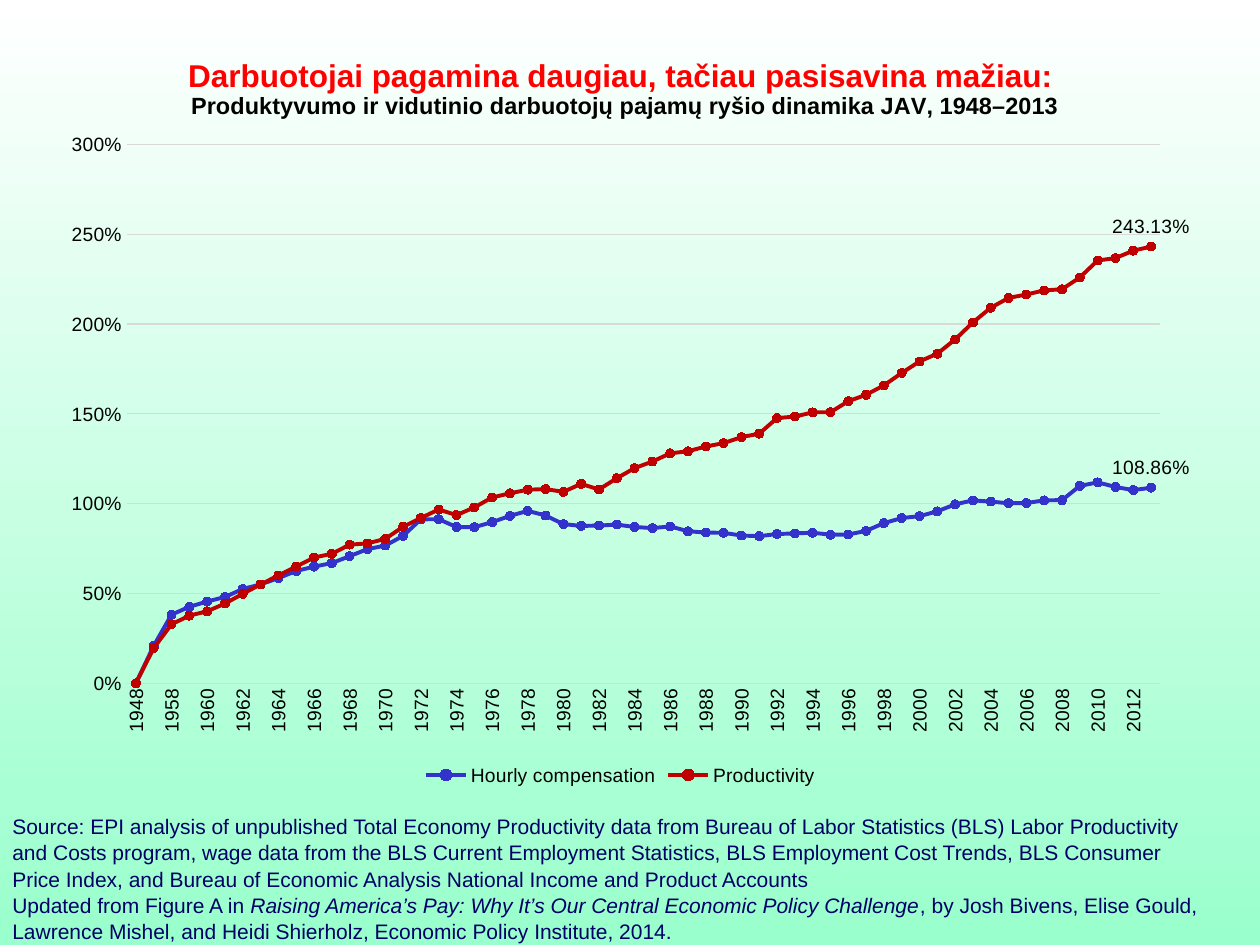
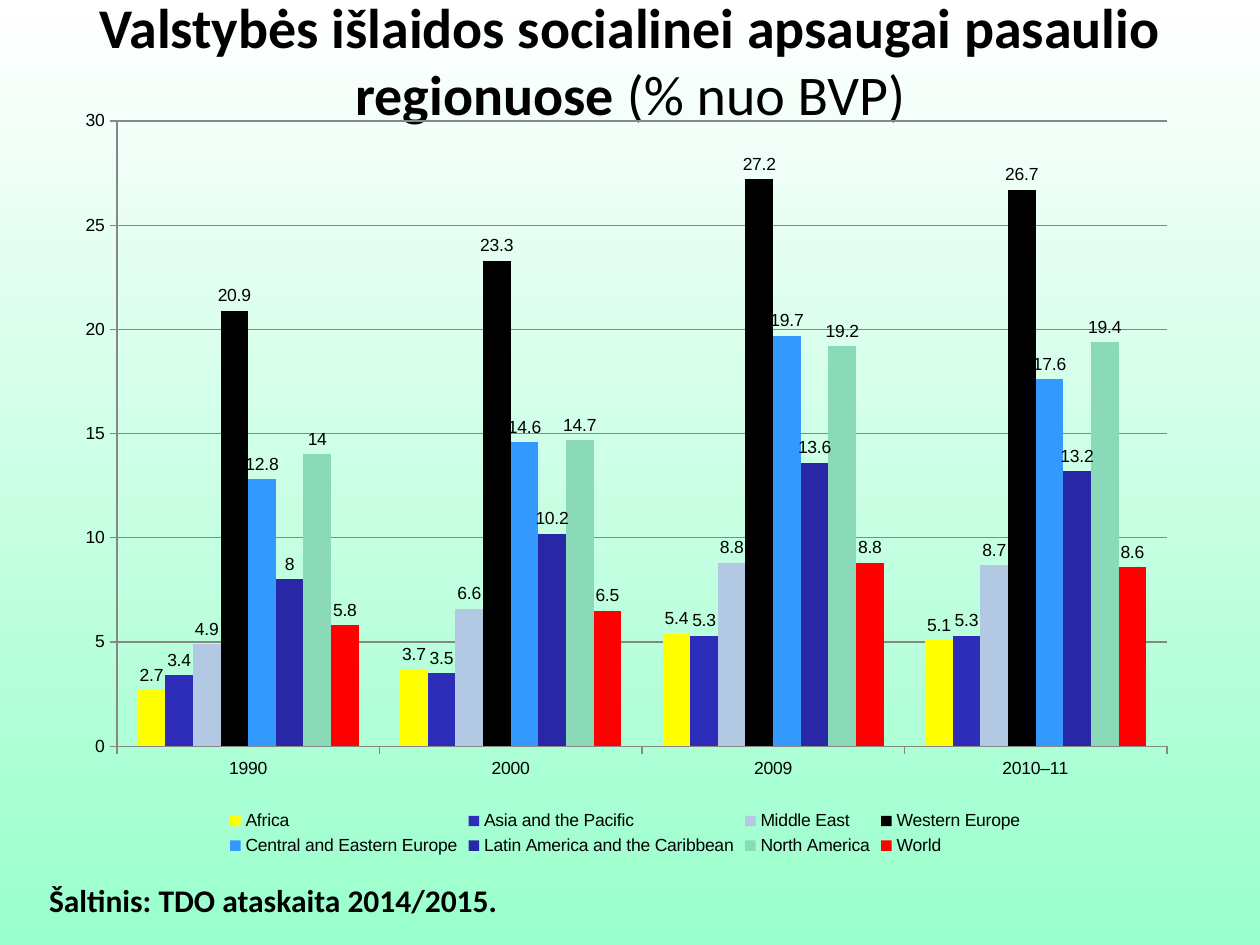
from lxml import etree
from pptx import Presentation
from pptx import util as u
from pptx.chart.data import CategoryChartData
from pptx.dml.color import RGBColor
from pptx.enum import chart as charts, text
from pptx.oxml.ns import qn

BLACK, RED, NAVY = "000000", "FF0000", "000066"
LIGHT_GREY, GREY = "D9D9D9", "878787"
BACKGROUND = ("FFFFFF", "99FFCC")

YEARS = ["1948", "1953"] + [str(year) for year in range(1958, 2014)]
PAY_AND_PRODUCTIVITY = [
    ("Hourly compensation", "3333CC", [
        0, 0.2085, 0.3817, 0.4255, 0.455, 0.48, 0.5248, 0.5503, 0.5851, 0.6247,
        0.6491, 0.669, 0.7074, 0.7468, 0.7661, 0.8203, 0.9126, 0.9131, 0.8698, 0.8686,
        0.8969, 0.9316, 0.9599, 0.9339, 0.886, 0.8758, 0.8777, 0.8834, 0.87, 0.8636,
        0.8732, 0.8464, 0.8388, 0.8374, 0.8222, 0.8191, 0.8307, 0.8343, 0.838, 0.8269,
        0.8281, 0.8482, 0.8916, 0.9196, 0.9303, 0.957, 0.9961, 1.018, 1.0111, 1.0021,
        1.0031, 1.0183, 1.0195, 1.0988, 1.1185, 1.0927, 1.0753, 1.0886]),
    ("Productivity", "C00000", [
        0, 0.1954, 0.3279, 0.3763, 0.4005, 0.4435, 0.4979, 0.55, 0.5999, 0.6494,
        0.7, 0.7206, 0.7716, 0.7787, 0.8038, 0.871, 0.9201, 0.9673, 0.9362, 0.9789,
        1.034, 1.0576, 1.0776, 1.0811, 1.0655, 1.11, 1.0787, 1.1413, 1.1973, 1.2343,
        1.28, 1.2914, 1.318, 1.3368, 1.3701, 1.3895, 1.4763, 1.4844, 1.5082, 1.5092,
        1.5701, 1.6063, 1.6586, 1.7276, 1.7918, 1.835, 1.9143, 2.0093, 2.091, 2.1453,
        2.1646, 2.1875, 2.1936, 2.2595, 2.3539, 2.3671, 2.4085, 2.4313]),
]

PERIODS = ["1990", "2000", "2009", "2010–11"]
SOCIAL_SPENDING = [
    ("Africa", "FFFF00", [2.7, 3.7, 5.4, 5.1]),
    ("Asia and the Pacific", "2D2DB9", [3.4, 3.5, 5.3, 5.3]),
    ("Middle East", "B2C8E3", [4.9, 6.6, 8.8, 8.7]),
    ("Western Europe", BLACK, [20.9, 23.3, 27.2, 26.7]),
    ("Central and Eastern Europe", "3399FF", [12.8, 14.6, 19.7, 17.6]),
    ("Latin America and the Caribbean", "2828A6", [8, 10.2, 13.6, 13.2]),
    ("North America", "8ADABA", [14, 14.7, 19.2, 19.4]),
    ("World", RED, [5.8, 6.5, 8.8, 8.6]),
]


def color(value):
    return RGBColor.from_string(value)


def style_line(line, line_color, width):
    line.color.rgb = color(line_color)
    line.width = u.Pt(width)


def place(part, index, **fractions):
    """Give a chart part a fixed position, as fractions of the chart."""
    for old in part.findall(qn("c:layout")):
        part.remove(old)
    layout = etree.Element(qn("c:layout"))
    manual = etree.SubElement(layout, qn("c:manualLayout"))
    settings = {"xMode": "edge", "yMode": "edge", **fractions}
    if "w" in fractions:
        settings = {"layoutTarget": "inner", **settings}
    for name, value in settings.items():
        etree.SubElement(manual, qn("c:" + name)).set("val", str(value))
    part.insert(index, layout)


class Deck:
    """Holds the shared style and the slide being filled."""

    def __init__(self):
        self.presentation = Presentation()
        self.presentation.slide_width = u.Cm(25.4)
        self.presentation.slide_height = u.Cm(19.05)
        self.slide = None

    def add_slide(self):
        self.slide = self.presentation.slides.add_slide(self.presentation.slide_layouts[6])
        fill = self.slide.background.fill
        fill.gradient()
        fill.gradient_angle = 270
        for position, (stop, value) in enumerate(zip(fill.gradient_stops, BACKGROUND)):
            stop.color.rgb = color(value)
            stop.position = position

    def add_paragraphs(self, frame, paragraphs, font="Arial", align=None, spacing=None):
        """Each paragraph is a list of runs: (words, size, colour, bold, italic)."""
        for number, runs in enumerate(paragraphs):
            paragraph = frame.add_paragraph() if number else frame.paragraphs[0]
            if align is not None:
                paragraph.alignment = align
            if spacing is not None:
                paragraph.line_spacing = spacing
            for words, size, run_color, bold, italic in runs:
                run = paragraph.add_run()
                run.text = words
                run.font.name = font
                run.font.size = u.Pt(size)
                run.font.color.rgb = color(run_color)
                run.font.bold, run.font.italic = bold, italic

    def add_text(self, box, paragraphs, wrap=True, anchor=text.MSO_ANCHOR.TOP, **style):
        frame = self.slide.shapes.add_textbox(*map(u.Cm, box)).text_frame
        frame.word_wrap = wrap
        frame.vertical_anchor = anchor
        self.add_paragraphs(frame, paragraphs, **style)

    def add_chart(self, kind, box, categories, rows, size, plot_box,
                  maximum, step, grid_color, tick, number_format="General"):
        data = CategoryChartData(number_format=number_format)
        data.categories = categories
        for name, _, values in rows:
            data.add_series(name, values)
        chart = self.slide.shapes.add_chart(kind, *map(u.Cm, box), data).chart
        chart.has_title = False
        chart.font.name = "Arial"
        chart.font.size = u.Pt(size)
        chart.font.color.rgb = color(BLACK)
        chart.has_legend = True
        chart.legend.position = charts.XL_LEGEND_POSITION.BOTTOM
        chart.legend.include_in_layout = False
        chart.plots[0].vary_by_categories = False
        x, y, w, h = plot_box
        place(chart._chartSpace.chart.plotArea, 0, x=x, y=y, w=w, h=h)

        values_axis = chart.value_axis
        values_axis.minimum_scale, values_axis.maximum_scale = 0, maximum
        values_axis.major_unit = step
        values_axis.has_major_gridlines = True
        style_line(values_axis.major_gridlines.format.line, grid_color, 0.75)
        for axis in (chart.category_axis, values_axis):
            axis.major_tick_mark = tick
            axis.minor_tick_mark = charts.XL_TICK_MARK.NONE
            style_line(axis.format.line, grid_color, 0.75)
        return chart

    def add_line_chart(self, box, title, categories, rows):
        """Add a percentage line chart that labels only its last points."""
        chart = self.add_chart(
            charts.XL_CHART_TYPE.LINE_MARKERS, box, categories, rows, 11,
            (0.07, 0.16, 0.9, 0.7), 3, 0.5, LIGHT_GREY, charts.XL_TICK_MARK.NONE, "0.00%")
        self.add_paragraphs(chart.chart_title.text_frame, title, align=text.PP_ALIGN.CENTER)
        chart.chart_title.include_in_layout = False
        place(chart.chart_title._element, 1, x=0.12, y=0.04)

        labels = chart.value_axis.tick_labels
        labels.number_format, labels.number_format_is_linked = "0%", False
        chart.value_axis.format.line.fill.background()
        years = chart.category_axis
        years.tick_labels.font.size = u.Pt(11)
        years._element.find(qn("c:txPr")).find(qn("a:bodyPr")).set("rot", "-5400000")

        for series, (_, series_color, values) in zip(chart.plots[0].series, rows):
            series.smooth = False
            style_line(series.format.line, series_color, 2.25)
            marker = series.marker
            marker.style, marker.size = charts.XL_MARKER_STYLE.CIRCLE, 5
            marker.format.fill.solid()
            marker.format.fill.fore_color.rgb = color(series_color)
            style_line(marker.format.line, series_color, 0.75)
            series.data_labels.show_value = False
            last_label = series.points[len(values) - 1].data_label
            last_label.position = charts.XL_LABEL_POSITION.ABOVE

    def add_column_chart(self, box, categories, rows):
        chart = self.add_chart(
            charts.XL_CHART_TYPE.COLUMN_CLUSTERED, box, categories, rows, 10,
            (0.05, 0.03, 0.93, 0.82), 30, 5, GREY, charts.XL_TICK_MARK.OUTSIDE)
        chart.plots[0].gap_width = 150
        for series, (_, series_color, _) in zip(chart.plots[0].series, rows):
            series.invert_if_negative = False
            series.format.fill.solid()
            series.format.fill.fore_color.rgb = color(series_color)
            series.data_labels.show_value = True
            series.data_labels.position = charts.XL_LABEL_POSITION.OUTSIDE_END


def add_productivity_slide(deck):
    deck.add_slide()

    def source(words, italic=False):
        return words, 12, NAVY, False, italic

    deck.add_text((0, 16.26, 24.66, 1.45), [
        [source("Source: EPI analysis of unpublished Total Economy Productivity data from "
                "Bureau of Labor Statistics (BLS) Labor Productivity and Costs program, wage "
                "data from the BLS Current Employment Statistics, BLS Employment Cost Trends, "
                "BLS Consumer Price Index, and Bureau of Economic Analysis National Income "
                "and Product Accounts")],
        [source("Updated from Figure A in "),
         source("Raising America’s Pay: Why It’s Our Central Economic Policy Challenge", True),
         source(", by Josh Bivens, Elise Gould, Lawrence Mishel, and Heidi Shierholz, "
                "Economic Policy Institute, 2014.")],
    ], spacing=1.04)
    title = [
        [("Darbuotojai pagamina daugiau, tačiau pasisavina mažiau: ", 18, RED, True, False)],
        [("Produktyvumo ir vidutinio darbuotojų pajamų ryšio dinamika JAV, 1948–2013",
          13.4, BLACK, True, False)],
    ]
    deck.add_line_chart((0.94, 0.43, 23.14, 15.52), title, YEARS, PAY_AND_PRODUCTIVITY)


def add_social_spending_slide(deck):
    deck.add_slide()
    deck.add_text((0.99, -0.28, 23.44, 3), [[
        ("Valstybės išlaidos socialinei apsaugai pasaulio regionuose", 32, BLACK, True, False),
        (" (% nuo BVP)", 32, BLACK, False, False),
    ]], font="Calibri", align=text.PP_ALIGN.CENTER)
    deck.add_column_chart((1.22, 1.98, 22.76, 15.37), PERIODS, SOCIAL_SPENDING)
    deck.add_text((0.74, 17.63, 9.63, 1.02), [[
        ("Šaltinis: TDO ataskaita 2014/2015.", 18, BLACK, True, False),
    ]], wrap=False, anchor=text.MSO_ANCHOR.MIDDLE, font="Calibri")


def main():
    deck = Deck()
    add_productivity_slide(deck)
    add_social_spending_slide(deck)
    deck.presentation.save("out.pptx")


if __name__ == "__main__":
    main()
